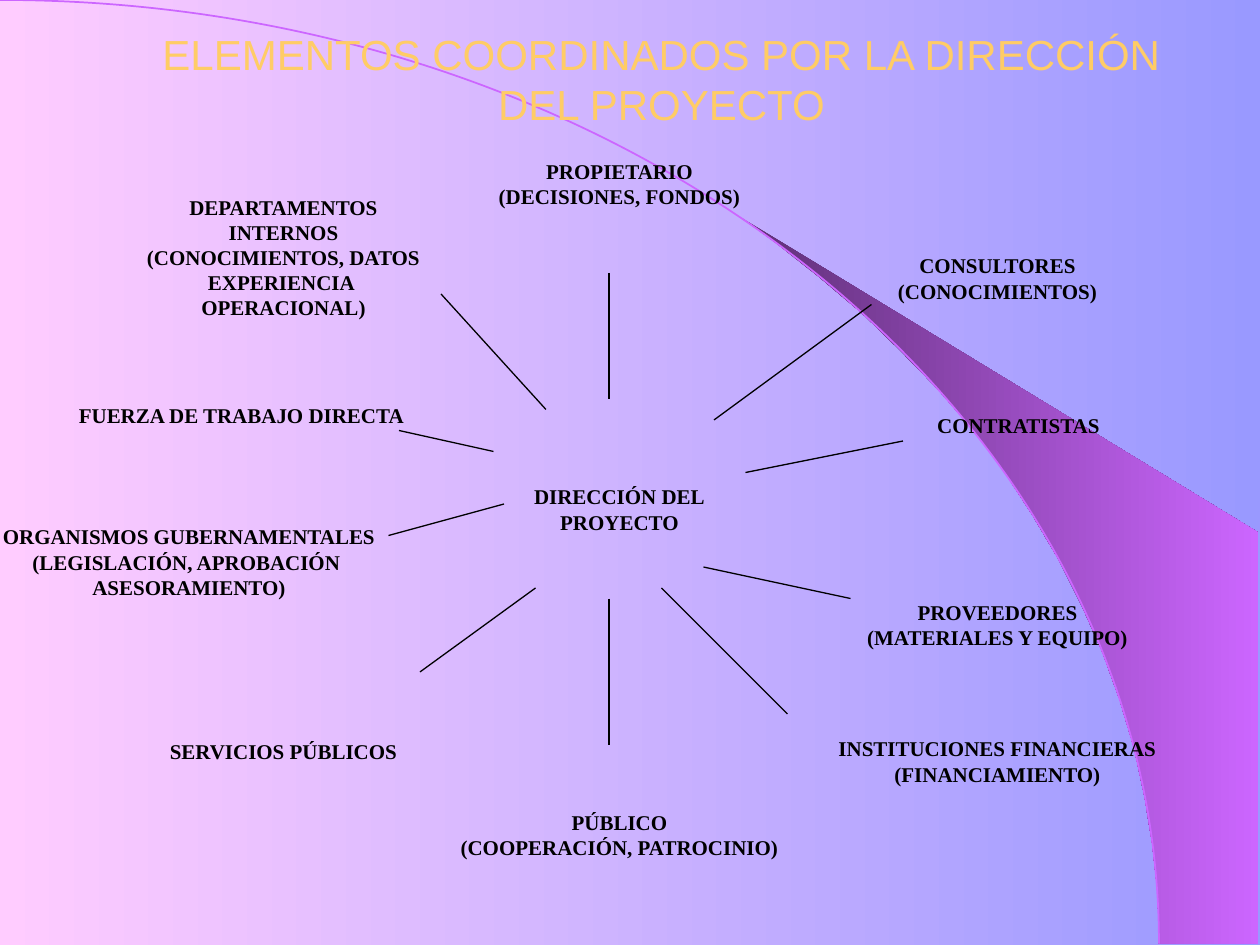
import math
from dataclasses import dataclass

from lxml import etree
from pptx import Presentation
from pptx import util as u
from pptx.dml.color import RGBColor
from pptx.enum import shapes, text
from pptx.oxml.ns import qn

PX = 9525
SLIDE_W, SLIDE_H = 960, 720


@dataclass(frozen=True)
class Theme:
    sky_start: str = "FFCCFF"
    sky_end: str = "9999FF"
    fan_start: str = "5E2F76"
    accent: str = "CC66FF"
    heading: str = "FFCC66"
    ink: str = "000000"
    heading_font: str = "Arial"
    body_font: str = "Times New Roman"
    heading_size: int = 24
    body_size: int = 12
    arc_width: float = 1
    spoke_width: float = 0.75


@dataclass(frozen=True)
class Box:
    left: int
    top: int
    width: int = 128
    height: int = 40


@dataclass(frozen=True)
class Party:
    wording: str
    box: Box


@dataclass(frozen=True)
class Spoke:
    x1: int
    y1: int
    x2: int
    y2: int


THEME = Theme()
ARC_W, ARC_H = 883, 719
ARC_CONTROLS = [(488, 0), (ARC_W, 322), (ARC_W, ARC_H)]
FAN_TIP = (565, 166)
FAN_CORNERS = [(959, 719), (959, 406)]

HEADING = Party("ELEMENTOS COORDINADOS POR LA DIRECCIÓN DEL PROYECTO", Box(96, 0, 816, 120))
PARTIES = [
    Party("PROPIETARIO\n(DECISIONES, FONDOS)", Box(408, 120)),
    Party("DEPARTAMENTOS\nINTERNOS\n(CONOCIMIENTOS, DATOS\nEXPERIENCIA \nOPERACIONAL)", Box(152, 176)),
    Party("FUERZA DE TRABAJO DIRECTA", Box(120, 296)),
    Party("PROVEEDORES\n(MATERIALES Y EQUIPO)", Box(696, 456)),
    Party("ORGANISMOS GUBERNAMENTALES\n(LEGISLACIÓN, APROBACIÓN \nASESORAMIENTO)", Box(80, 408)),
    Party("INSTITUCIONES FINANCIERAS\n(FINANCIAMIENTO)", Box(696, 560)),
    Party("SERVICIOS PÚBLICOS", Box(152, 552)),
    Party("PÚBLICO\n(COOPERACIÓN, PATROCINIO)", Box(408, 616)),
    Party("DIRECCIÓN DEL\nPROYECTO", Box(408, 368)),
    Party("CONSULTORES\n(CONOCIMIENTOS)", Box(696, 192)),
    Party("CONTRATISTAS", Box(712, 304)),
]
SPOKES = [
    Spoke(464, 208, 464, 304),
    Spoke(464, 456, 464, 568),
    Spoke(320, 512, 408, 448),
    Spoke(296, 408, 384, 384),
    Spoke(336, 224, 416, 312),
    Spoke(568, 360, 688, 336),
    Spoke(536, 432, 648, 456),
    Spoke(504, 448, 600, 544),
    Spoke(304, 328, 376, 344),
    Spoke(544, 320, 664, 232),
]


def color(code: str) -> RGBColor:
    return RGBColor.from_string(code)


def paint_gradient(fill, start: str, end: str) -> None:
    fill.gradient()
    fill.gradient_angle = 0
    for place, (stop, code) in enumerate(zip(fill.gradient_stops, (start, end))):
        stop.color.rgb = color(code)
        stop.position = place


def add_outline(slide, points: list[tuple[int, int]], close: bool):
    builder = slide.shapes.build_freeform(*points[0], scale=PX)
    builder.add_line_segments(points[1:], close=close)
    outline = builder.convert_to_shape()
    outline.shadow.inherit = False
    return outline


def add_fan(slide) -> None:
    angles = [math.radians(degree) for degree in range(42, 91, 3)]
    edge = [(round(ARC_W * math.sin(a)), round(ARC_H * (1 - math.cos(a)))) for a in angles]
    fan = add_outline(slide, [FAN_TIP] + edge + FAN_CORNERS, True)
    paint_gradient(fan.fill, THEME.fan_start, THEME.accent)
    fan.line.fill.background()


def add_arc(slide) -> None:
    arc = add_outline(slide, [(0, 0), (ARC_W, ARC_H)], False)
    straight = arc._element.find(".//" + qn("a:lnTo"))
    curve = etree.Element(qn("a:cubicBezTo"))
    for x, y in ARC_CONTROLS:
        etree.SubElement(curve, qn("a:pt"), x=str(x), y=str(y))
    straight.getparent().replace(straight, curve)
    arc.fill.background()
    arc.line.color.rgb = color(THEME.accent)
    arc.line.width = u.Pt(THEME.arc_width)


def place(box: Box) -> list[int]:
    return [n * PX for n in (box.left, box.top, box.width, box.height)]


def write(frame, wording: str, font: str, size: int, ink: str, bold: bool) -> None:
    frame.text = wording
    frame.vertical_anchor = text.MSO_ANCHOR.MIDDLE
    for paragraph in frame.paragraphs:
        paragraph.alignment = text.PP_ALIGN.CENTER
        for run in paragraph.runs:
            run.font.name = font
            run.font.size = u.Pt(size)
            run.font.bold = bold
            run.font.color.rgb = color(ink)


def add_heading(slide, heading: Party) -> None:
    frame = slide.shapes.add_textbox(*place(heading.box)).text_frame
    frame.word_wrap = True
    write(frame, heading.wording, THEME.heading_font, THEME.heading_size, THEME.heading, False)


def add_party(slide, party: Party) -> None:
    label = slide.shapes.add_shape(shapes.MSO_SHAPE.RECTANGLE, *place(party.box))
    label.shadow.inherit = False
    label.fill.background()
    label.line.fill.background()
    label.text_frame.word_wrap = False
    write(label.text_frame, party.wording, THEME.body_font, THEME.body_size, THEME.ink, True)


def add_spoke(slide, spoke: Spoke) -> None:
    ends = (n * PX for n in (spoke.x1, spoke.y1, spoke.x2, spoke.y2))
    line = slide.shapes.add_connector(shapes.MSO_CONNECTOR.STRAIGHT, *ends)
    line.line.color.rgb = color(THEME.ink)
    line.line.width = u.Pt(THEME.spoke_width)
    etree.SubElement(line._element.spPr, qn("a:effectLst"))


def main() -> None:
    deck = Presentation()
    deck.slide_width, deck.slide_height = SLIDE_W * PX, SLIDE_H * PX
    slide = deck.slides.add_slide(deck.slide_layouts[6])
    paint_gradient(slide.background.fill, THEME.sky_start, THEME.sky_end)
    add_fan(slide)
    add_arc(slide)
    add_heading(slide, HEADING)
    for party in PARTIES:
        add_party(slide, party)
    for spoke in SPOKES:
        add_spoke(slide, spoke)
    deck.save("out.pptx")


if __name__ == "__main__":
    main()
